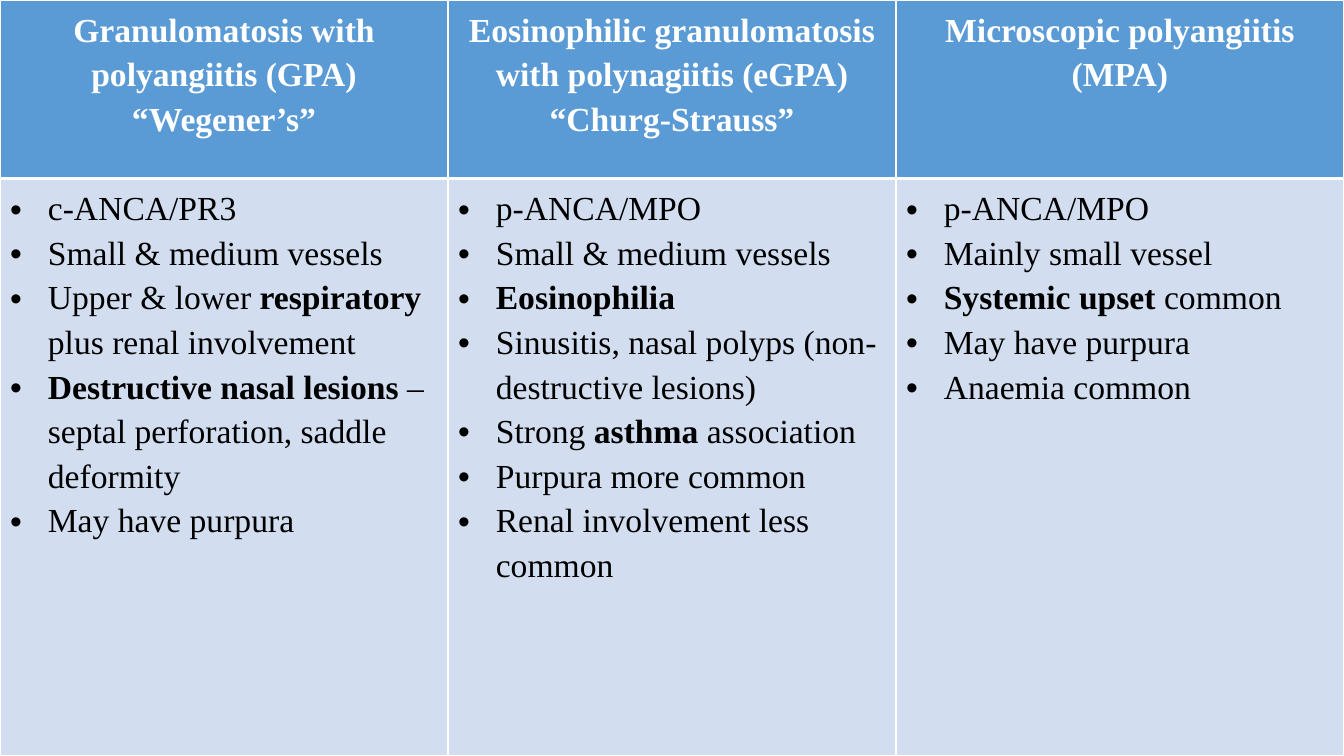
from lxml import etree
from pptx import Presentation
from pptx import util as u
from pptx.dml.color import RGBColor
from pptx.enum import text
from pptx.oxml import ns

WHITE = RGBColor(0xFF, 0xFF, 0xFF)
BLACK = RGBColor(0x00, 0x00, 0x00)
BLUE = RGBColor(0x5B, 0x9B, 0xD5)
PALE = RGBColor(0xD2, 0xDE, 0xEF)

WIDE, HIGH, HEAD = 960, 540, 127.5

TYPES = [
    ("Granulomatosis with polyangiitis (GPA) “Wegener’s”", [
        "c-ANCA/PR3",
        "Small & medium vessels",
        "Upper & lower *respiratory* plus renal involvement",
        "*Destructive nasal lesions *– septal perforation, saddle deformity",
        "May have purpura",
    ]),
    ("Eosinophilic granulomatosis with polynagiitis (eGPA) “Churg-Strauss”", [
        "p-ANCA/MPO",
        "Small & medium vessels",
        "*Eosinophilia*",
        "Sinusitis, nasal polyps (non-destructive lesions)",
        "Strong *asthma* association",
        "Purpura more common",
        "Renal involvement less common",
    ]),
    ("Microscopic polyangiitis (MPA)", [
        "p-ANCA/MPO",
        "Mainly small vessel",
        "*Systemic upset *common",
        "May have purpura",
        "Anaemia common",
    ]),
]


class Deck:
    face = {"name": "Times New Roman", "size": u.Pt(24)}
    indent = u.Pt(27)

    def __init__(self):
        self.prs = Presentation()
        self.prs.slide_width = u.Pt(WIDE)
        self.prs.slide_height = u.Pt(HIGH)
        self.slide = self.prs.slides.add_slide(self.prs.slide_layouts[6])

    def grid(self, count, rows):
        frame = self.slide.shapes.add_table(
            len(rows), count, 0, 0, u.Pt(WIDE), u.Pt(HIGH))
        for col in frame.table.columns:
            col.width = u.Pt(WIDE / count)
        for row, high in zip(frame.table.rows, rows):
            row.height = u.Pt(high)
        return frame.table

    def edge(self, cell, side, width):
        line = etree.SubElement(
            cell._tc.get_or_add_tcPr(), ns.qn("a:ln" + side), w=str(u.Pt(width)))
        fill = etree.SubElement(line, ns.qn("a:solidFill"))
        etree.SubElement(fill, ns.qn("a:srgbClr"), val=str(WHITE))

    def bullet(self, para):
        props = para._p.get_or_add_pPr()
        props.set("marL", str(self.indent))
        props.set("indent", str(-self.indent))
        etree.SubElement(props, ns.qn("a:buFont"), typeface="Arial")
        etree.SubElement(props, ns.qn("a:buChar"), char="•")

    def label(self, para, words, color, bold=False):
        para.line_spacing = 1.2
        for i, part in enumerate(words.split("*")):
            if part:
                run = para.add_run()
                run.text = part
                look = {**self.face, "bold": bold or i % 2 == 1}
                for key, value in look.items():
                    setattr(run.font, key, value)
                run.font.color.rgb = color

    def paint(self, cell, color, thick):
        for side in "LRTB":
            self.edge(cell, side, 3 if side == thick else 1)
        cell.fill.solid()
        cell.fill.fore_color.rgb = color

    def title(self, cell, words):
        self.paint(cell, BLUE, "B")
        para = cell.text_frame.paragraphs[0]
        para.alignment = text.PP_ALIGN.CENTER
        self.label(para, words, WHITE, True)

    def points(self, cell, items):
        self.paint(cell, PALE, "T")
        frame = cell.text_frame
        for i, item in enumerate(items):
            para = frame.add_paragraph() if i else frame.paragraphs[0]
            self.bullet(para)
            self.label(para, item, BLACK)


def main():
    deck = Deck()
    table = deck.grid(len(TYPES), [HEAD, HIGH - HEAD])
    for col, (name, facts) in enumerate(TYPES):
        deck.title(table.cell(0, col), name)
        deck.points(table.cell(1, col), facts)
    deck.prs.save("out.pptx")


if __name__ == "__main__":
    main()
